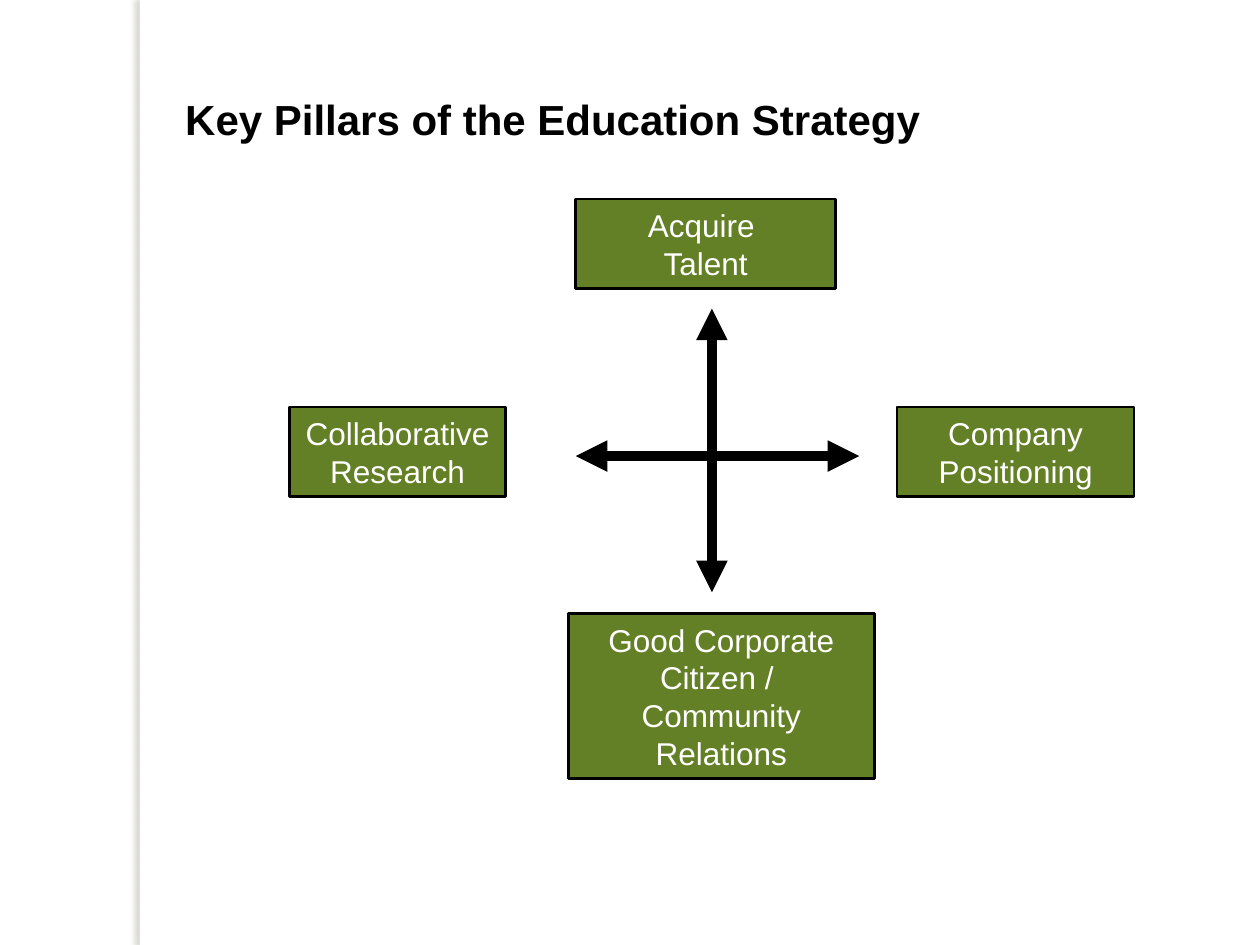
from lxml import etree
from pptx import Presentation
from pptx.dml.color import RGBColor as Rgb
from pptx.enum.shapes import MSO_CONNECTOR as Link, MSO_SHAPE as Form
from pptx.enum.text import MSO_ANCHOR as Anchor, PP_ALIGN as Align
from pptx.oxml import parse_xml
from pptx.oxml.ns import nsdecls, qn
from pptx.util import Inches, Pt

BLACK = Rgb(0x00, 0x00, 0x00)
WHITE = Rgb(0xFF, 0xFF, 0xFF)
GREEN = Rgb(0x63, 0x80, 0x26)
SHADE = Rgb(0x73, 0x6F, 0x63)


class Deck:
    """Draws styled elements on a grid of tenths of an inch."""

    font = "Arial"
    unit = Inches(0.1)

    def __init__(self, cols, rows):
        self.show = Presentation()
        self.show.slide_width, self.show.slide_height = self.grid(cols, rows)
        self.slide = self.show.slides.add_slide(self.show.slide_layouts[5])
        self.shapes = self.slide.shapes

    def grid(self, *cells):
        return [round(cell * self.unit) for cell in cells]

    def label(self, frame, lines, size, color, align, bold=False):
        frame.word_wrap = True
        frame.text = "\n".join(lines)
        for para in frame.paragraphs:
            para.alignment = align
            font = para.font
            font.name, font.size, font.bold = self.font, Pt(size), bold
            font.color.rgb = color

    def title(self, text, *area):
        head = self.shapes.title
        head.left, head.top, head.width, head.height = self.grid(*area)
        frame = head.text_frame
        frame.vertical_anchor = Anchor.TOP
        frame.margin_top = Inches(0.08)
        self.label(frame, [text], 24, BLACK, Align.LEFT, True)

    def rect(self, fill, *area):
        rect = self.shapes.add_shape(Form.RECTANGLE, *self.grid(*area))
        rect.shadow.inherit = False
        rect.fill.solid()
        rect.fill.fore_color.rgb = fill
        return rect

    def band(self, *area):
        band = self.rect(WHITE, *area)
        band.line.fill.background()
        glow = band.element.spPr.find(qn("a:effectLst"))
        glow.append(parse_xml(
            f'<a:outerShdw {nsdecls("a")} blurRad="{Pt(3)}" dist="{Pt(3)}" '
            f'dir="10800000" rotWithShape="0"><a:srgbClr val="{SHADE}">'
            '<a:alpha val="25000"/></a:srgbClr></a:outerShdw>'))

    def box(self, lines, *area):
        box = self.rect(GREEN, *area)
        box.line.color.rgb = BLACK
        box.line.width = Pt(1.5)
        box.text_frame.vertical_anchor = Anchor.MIDDLE
        self.label(box.text_frame, lines, 18, WHITE, Align.CENTER)

    def arrow(self, *ends):
        line = self.shapes.add_connector(Link.STRAIGHT, *self.grid(*ends))
        line.line.color.rgb = BLACK
        line.line.width = Pt(6)
        props = line.element.spPr
        stroke = props.find(qn("a:ln"))
        for end in ("a:headEnd", "a:tailEnd"):
            etree.SubElement(stroke, qn(end), type="triangle")
        etree.SubElement(props, qn("a:effectLst"))


def main():
    deck = Deck(100, 75)
    deck.band(11.1, 0, 0.8, 75)
    deck.title("Key Pillars of the Education Strategy", 13.7, 6.6, 72.5, 6.7)
    deck.box(["Collaborative Research"], 23, 32.3, 17.1, 7.1)
    deck.box(["Company Positioning"], 71.2, 32.3, 18.8, 7.1)
    deck.box(["Acquire ", "Talent"], 45.7, 15.8, 20.6, 7.1)
    deck.box(["Good Corporate Citizen / ", "Community Relations"],
             45.1, 48.7, 24.3, 13.1)
    deck.arrow(56.5, 24.5, 56.5, 47)
    deck.arrow(45.7, 36.2, 68.2, 36.2)
    deck.show.save("out.pptx")


if __name__ == "__main__":
    main()
